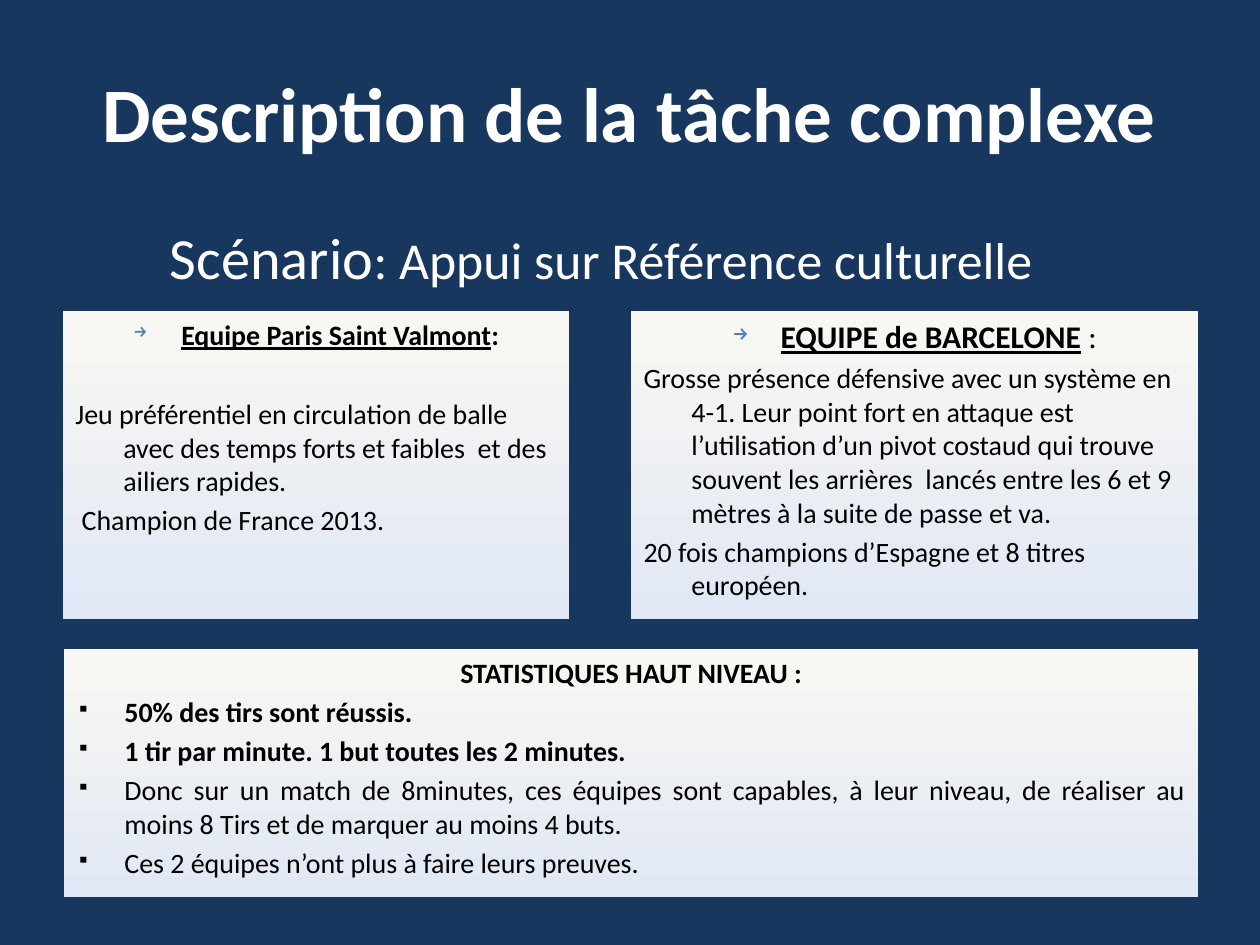
from dataclasses import dataclass

import pptx
import pptx.dml.color
import pptx.enum.shapes
import pptx.enum.text
import pptx.oxml.ns
import pptx.util
from lxml import etree
from pptx.util import Inches

ALIGN = pptx.enum.text.PP_ALIGN
ANCHOR = pptx.enum.text.MSO_ANCHOR


@dataclass(frozen=True)
class Theme:
    """Colours and type sizes of the slide."""

    font: str = "Calibri"
    background: str = "17375E"
    light: str = "FFFFFF"
    dark: str = "000000"
    arrow: str = "4F81BD"
    panel_top: str = "F8F7F3"
    panel_bottom: str = "E1E8F5"
    title: float = 44
    scenario: float = 33.3
    reference: float = 29.6
    heading: float = 18
    body: float = 16


THEME = Theme()


@dataclass(frozen=True)
class Span:
    """A stretch of text in one style."""

    text: str
    size: float = THEME.body
    bold: bool = False
    underline: bool = False
    color: str = THEME.dark


@dataclass(frozen=True)
class Para:
    """A paragraph with its alignment, spacing, indent and bullet."""

    spans: tuple
    align: int = ALIGN.LEFT
    before: float = 3.2
    margin: float = 0.38
    first: float = -0.38
    bullet: str = ""
    bullet_color: str = THEME.dark


def rgb(value):
    """Return a colour from its hexadecimal digits."""
    return pptx.dml.color.RGBColor.from_string(value)


def set_indent(page_para, para):
    """Give a paragraph its hanging indent and bullet."""
    properties = page_para._p.get_or_add_pPr()
    properties.set("marL", str(Inches(para.margin)))
    properties.set("indent", str(Inches(para.first)))
    qn = pptx.oxml.ns.qn
    if not para.bullet:
        etree.SubElement(properties, qn("a:buNone"))
        return
    color = etree.SubElement(properties, qn("a:buClr"))
    etree.SubElement(color, qn("a:srgbClr"), val=para.bullet_color)
    etree.SubElement(properties, qn("a:buSzPct"), val="65000")
    etree.SubElement(properties, qn("a:buChar"), char=para.bullet)


def write(box, paras, anchor=ANCHOR.TOP):
    """Fill a box with styled paragraphs."""
    frame = box.text_frame
    frame.word_wrap = True
    frame.vertical_anchor = anchor
    for index, para in enumerate(paras):
        target = frame.add_paragraph() if index else frame.paragraphs[0]
        set_indent(target, para)
        target.alignment = para.align
        target.space_before = pptx.util.Pt(para.before if index else 0)
        for span in para.spans:
            run = target.add_run()
            run.text = span.text
            run.font.name = THEME.font
            run.font.size = pptx.util.Pt(span.size)
            run.font.bold = span.bold
            run.font.underline = span.underline
            run.font.color.rgb = rgb(span.color)


def add_text(page, left, top, width, height, para, anchor=ANCHOR.TOP):
    """Add a text box holding one paragraph."""
    box = page.shapes.add_textbox(Inches(left), Inches(top), Inches(width), Inches(height))
    write(box, [para], anchor)


def add_panel(page, left, top, width, height, paras):
    """Add a rectangle with a vertical gradient and text."""
    box = page.shapes.add_shape(
        pptx.enum.shapes.MSO_SHAPE.RECTANGLE,
        Inches(left), Inches(top), Inches(width), Inches(height),
    )
    box.shadow.inherit = False
    box.line.fill.background()
    box.fill.gradient()
    box.fill.gradient_angle = 270
    for stop, color in zip(box.fill.gradient_stops, (THEME.panel_top, THEME.panel_bottom)):
        stop.color.rgb = rgb(color)
    write(box, paras)


def team_heading(name, ending):
    """Return the arrowed, centred heading of a team panel."""
    return Para((name, ending), ALIGN.CENTER, bullet="→", bullet_color=THEME.arrow)


def statistic(text, bold=False):
    """Return a justified paragraph with a square bullet."""
    return Para((Span(text, bold=bold),), ALIGN.JUSTIFY, bullet="▪")


def main():
    """Build the slide and save it."""
    deck = pptx.Presentation()
    deck.slide_width, deck.slide_height = Inches(10), Inches(7.5)
    page = deck.slides.add_slide(deck.slide_layouts[6])
    page.background.fill.solid()
    page.background.fill.fore_color.rgb = rgb(THEME.background)

    title = Span("Description de la tâche complexe", THEME.title, True, color=THEME.light)
    add_text(page, 0.5, 0.26, 9, 1.25,
             Para((title,), ALIGN.CENTER, margin=0, first=0), ANCHOR.MIDDLE)
    scenario = Span("Scénario", THEME.scenario, color=THEME.light)
    reference = Span(": Appui sur Référence culturelle", THEME.reference, color=THEME.light)
    add_text(page, 1.25, 1.71, 7.16, 0.62, Para((scenario, reference), margin=0, first=0))

    add_panel(page, 0.5, 2.47, 4.02, 2.44, [
        team_heading(Span("Equipe Paris Saint Valmont", bold=True, underline=True),
                     Span(":", bold=True)),
        Para((Span("Jeu préférentiel en circulation de balle avec des temps forts "
                   "et faibles  et des ailiers rapides."),), before=26),
        Para((Span("Champion de France 2013."),), first=-0.33),
    ])
    add_panel(page, 5.01, 2.47, 4.5, 2.44, [
        team_heading(Span("EQUIPE de BARCELONE", THEME.heading, True, True),
                     Span(" :", THEME.heading)),
        Para((Span("Grosse présence défensive avec un système en 4-1. Leur point fort "
                   "en attaque est l’utilisation d’un pivot costaud qui trouve souvent "
                   "les arrières  lancés entre les 6 et 9 mètres à la suite de passe "
                   "et va."),)),
        Para((Span("20 fois champions d’Espagne et 8 titres européen."),)),
    ])
    add_panel(page, 0.51, 5.15, 9, 1.97, [
        Para((Span("STATISTIQUES HAUT NIVEAU :", bold=True),), ALIGN.CENTER,
             margin=0, first=0),
        statistic("50% des tirs sont réussis.", True),
        statistic("1 tir par minute. 1 but toutes les 2 minutes.", True),
        statistic("Donc sur un match de 8minutes, ces équipes sont capables, à leur "
                  "niveau, de réaliser au moins 8 Tirs et de marquer au moins 4 buts."),
        statistic("Ces 2 équipes n’ont plus à faire leurs preuves."),
    ])
    deck.save("out.pptx")


if __name__ == "__main__":
    main()
